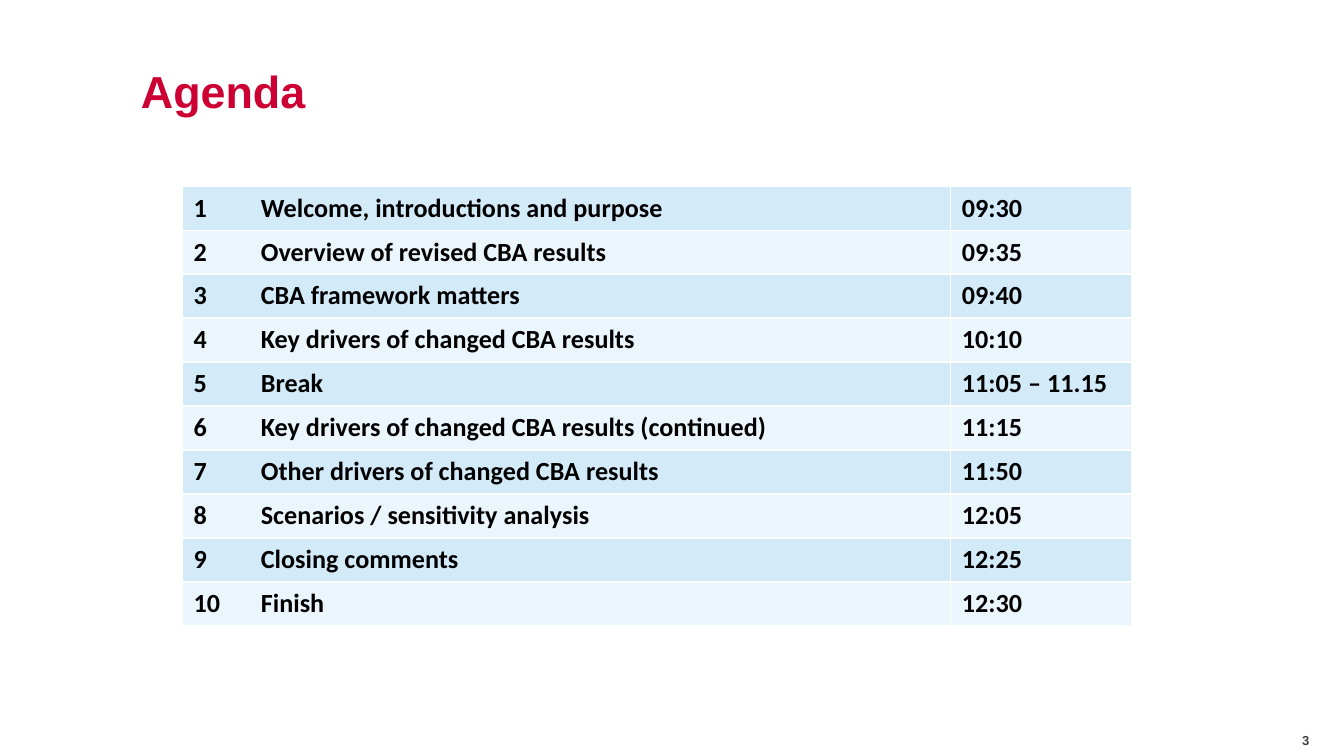
from typing import NamedTuple

from pptx import Presentation
from pptx.dml.color import RGBColor
from pptx.enum.text import MSO_ANCHOR as Anchor, PP_ALIGN as Align
from pptx.oxml import parse_xml
from pptx.oxml.ns import nsdecls
from pptx.util import Cm, Pt

ROW_HEIGHT = 0.83
COLUMN_WIDTHS = (14.52, 3.43)
BAND_FILLS = ("D3EAF9", "EAF5FC")


class Item(NamedTuple):
    topic: str
    time: str


AGENDA = [
    Item("Welcome, introductions and purpose", "09:30"),
    Item("Overview of revised CBA results", "09:35"),
    Item("CBA framework matters", "09:40"),
    Item("Key drivers of changed CBA results", "10:10"),
    Item("Break", "11:05 – 11.15"),
    Item("Key drivers of changed CBA results (continued)", "11:15"),
    Item("Other drivers of changed CBA results", "11:50"),
    Item("Scenarios / sensitivity analysis", "12:05"),
    Item("Closing comments", "12:25"),
    Item("Finish", "12:30"),
]


def color(value: str) -> RGBColor:
    return RGBColor.from_string(value)


def style(para, name: str, size: float, value: str) -> None:
    para.alignment = Align.LEFT
    font = para.font
    font.name, font.size, font.bold = name, Pt(size), True
    font.color.rgb = color(value)


def place(shape, left: float, top: float, width: float, height: float) -> None:
    shape.left, shape.top = Cm(left), Cm(top)
    shape.width, shape.height = Cm(width), Cm(height)


def add_borders(cell) -> None:
    properties = cell._tc.get_or_add_tcPr()
    for side in ("lnL", "lnR", "lnT", "lnB"):
        properties.append(parse_xml(
            f'<a:{side} {nsdecls("a")} w="{Pt(1)}"><a:solidFill>'
            f'<a:srgbClr val="FFFFFF"/></a:solidFill></a:{side}>'))


def fill_cell(cell, text: str, fill: str) -> None:
    add_borders(cell)
    cell.fill.solid()
    cell.fill.fore_color.rgb = color(fill)
    cell.margin_left = cell.margin_right = Cm(0.22)
    cell.margin_top = cell.margin_bottom = Cm(0.11)
    cell.text = text
    para = cell.text_frame.paragraphs[0]
    para._p.get_or_add_pPr().append(parse_xml(
        f'<a:tabLst {nsdecls("a")}><a:tab pos="{Cm(1.27)}" algn="l"/></a:tabLst>'))
    style(para, "Calibri", 14, "000000")


def add_agenda(page, items: list[Item]) -> None:
    frame = page.shapes.add_table(
        len(items), len(COLUMN_WIDTHS), Cm(3.44), Cm(3.52),
        Cm(sum(COLUMN_WIDTHS)), Cm(ROW_HEIGHT * len(items)))
    table = frame.table
    for column, width in zip(table.columns, COLUMN_WIDTHS):
        column.width = Cm(width)
    for index, item in enumerate(items):
        table.rows[index].height = Cm(ROW_HEIGHT)
        fill = BAND_FILLS[index % 2]
        fill_cell(table.cell(index, 0), f"{index + 1}\t{item.topic}", fill)
        fill_cell(table.cell(index, 1), item.time, fill)


def main() -> None:
    deck = Presentation()
    deck.slide_width, deck.slide_height = Cm(25.4), Cm(14.28)
    page = deck.slides.add_slide(deck.slide_layouts[5])

    # Title
    title = page.shapes.title
    place(title, 2.41, 0.36, 20.57, 2.29)
    title.text_frame.text = "Agenda"
    title.text_frame.vertical_anchor = Anchor.MIDDLE
    heading = title.text_frame.paragraphs[0]
    heading.line_spacing = Pt(40)
    style(heading, "Arial", 24, "CD0034")

    # Agenda table
    add_agenda(page, AGENDA)

    # Page number
    box = page.shapes.add_textbox(Cm(24.36), Cm(13.69), Cm(1.17), Cm(0.58))
    box.text_frame.word_wrap = True
    box.text_frame.vertical_anchor = Anchor.MIDDLE
    box.text_frame.text = "3"
    style(box.text_frame.paragraphs[0], "Arial", 7, "404040")

    deck.save("out.pptx")


if __name__ == "__main__":
    main()
